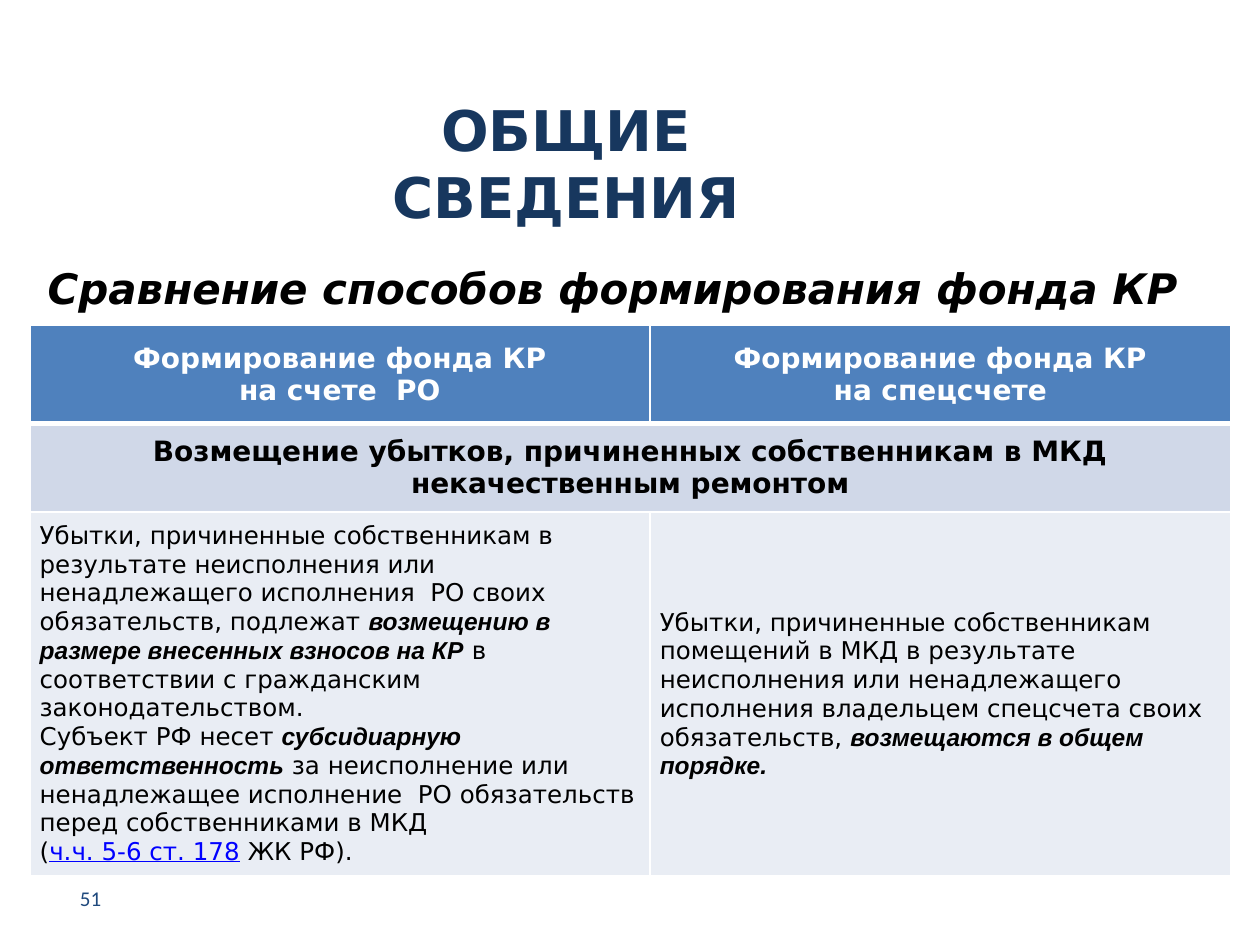
from lxml.etree import SubElement
from pptx import Presentation
from pptx.dml.color import RGBColor
from pptx.enum.text import MSO_ANCHOR, PP_ALIGN
from pptx.oxml.ns import qn
from pptx.util import Cm, Pt

COLORS = {
    "title": "17375E",
    "number": "1F497D",
    "text": "000000",
    "link": "0000FF",
    "white": "FFFFFF",
    "header": "4F81BD",
    "topic": "D0D8E8",
    "body": "E9EDF4",
}
MAIN_FONT = "DejaVu Sans"
ACCENT_FONT = "Arial"

# Cell texts: a list of paragraphs, each a list of (text, kind) spans
HEADERS = [
    [[("Формирование фонда КР", "plain")], [("на счете  РО", "plain")]],
    [[("Формирование фонда КР", "plain")], [("на спецсчете", "plain")]],
]
TOPIC = [[("Возмещение убытков, причиненных собственникам в МКД "
           "некачественным ремонтом", "plain")]]
DETAILS = [
    [
        [("Убытки, причиненные собственникам в результате неисполнения или "
          "ненадлежащего исполнения  РО своих обязательств, подлежат ", "plain"),
         ("возмещению в размере внесенных взносов на КР", "accent"),
         (" в соответствии с гражданским законодательством.", "plain")],
        [("Субъект РФ несет ", "plain"),
         ("субсидиарную ответственность", "accent"),
         (" за неисполнение или ненадлежащее исполнение  РО обязательств "
          "перед собственниками в МКД", "plain")],
        [("(", "plain"), ("ч.ч. 5-6 ст. 178", "link"), (" ЖК РФ).", "plain")],
    ],
    [
        [("Убытки, причиненные собственникам помещений в МКД в результате "
          "неисполнения или ненадлежащего исполнения владельцем спецсчета "
          "своих обязательств, ", "plain"),
         ("возмещаются в общем порядке.", "accent")],
    ],
]


def color(name):
    return RGBColor.from_string(COLORS[name])


def style_font(font, size, color_name, name=MAIN_FONT, bold=False, italic=False):
    font.name = name
    font.size = Pt(size)
    font.bold = bold
    font.italic = italic
    font.color.rgb = color(color_name)


def add_text(page, position, text, align, anchor, **style):
    box = page.shapes.add_textbox(*(Cm(value) for value in position))
    frame = box.text_frame
    frame.word_wrap = True
    frame.vertical_anchor = anchor
    para = frame.paragraphs[0]
    para.text = text
    para.alignment = align
    style_font(para.font, **style)


def add_borders(cell, top, bottom):
    properties = cell._tc.get_or_add_tcPr()
    for side, width in (("L", 1), ("R", 1), ("T", top), ("B", bottom)):
        line = SubElement(properties, qn(f"a:ln{side}"), w=str(Pt(width)))
        fill = SubElement(line, qn("a:solidFill"))
        SubElement(fill, qn("a:srgbClr"), val=COLORS["white"])


def fill_cell(cell, paragraphs, align, **style):
    frame = cell.text_frame
    for index, spans in enumerate(paragraphs):
        para = frame.add_paragraph() if index else frame.paragraphs[0]
        para.alignment = align
        style_font(para.font, **style)
        for text, kind in spans:
            span = para.add_run()
            span.text = text
            # Runs carry the font as well, since table text ignores paragraph defaults
            style_font(span.font, **style)
            if kind == "accent":
                span.font.name = ACCENT_FONT
                span.font.bold = span.font.italic = True
            elif kind == "link":
                span.font.color.rgb = color("link")
                span.font.underline = True


def add_comparison(page):
    widths = (12.5, 11.71)
    heights = (1.98, 1.78, 7.34)
    frame = page.shapes.add_table(len(heights), len(widths), Cm(0.6), Cm(6.56),
                                  Cm(sum(widths)), Cm(sum(heights)))
    table = frame.table
    for column, width in zip(table.columns, widths):
        column.width = Cm(width)
    for row, height in zip(table.rows, heights):
        row.height = Cm(height)

    # Borders and fills, with a thick rule under the header
    looks = (("header", 1, 3), ("topic", 3, 1), ("body", 1, 1))
    for row, (fill_name, top, bottom) in zip(table.rows, looks):
        for cell in row.cells:
            add_borders(cell, top, bottom)
            cell.fill.solid()
            cell.fill.fore_color.rgb = color(fill_name)
            cell.vertical_anchor = MSO_ANCHOR.MIDDLE
            cell.margin_left = cell.margin_right = Cm(0.2)
            cell.margin_top = cell.margin_bottom = Cm(0.1)

    # Cell texts
    table.cell(1, 0).merge(table.cell(1, 1))
    fill_cell(table.cell(1, 0), TOPIC, PP_ALIGN.CENTER,
              size=16, color_name="text", bold=True)
    for column, (header, detail) in enumerate(zip(HEADERS, DETAILS)):
        fill_cell(table.cell(0, column), header, PP_ALIGN.CENTER,
                  size=16, color_name="white", bold=True)
        fill_cell(table.cell(2, column), detail, PP_ALIGN.LEFT,
                  size=14, color_name="text")


def main():
    deck = Presentation()
    deck.slide_width, deck.slide_height = Cm(25.4), Cm(19.05)
    page = deck.slides.add_slide(deck.slide_layouts[6])

    # Title and subtitle
    add_text(page, (6.15, 1.4, 10.52, 3.76), "ОБЩИЕ СВЕДЕНИЯ",
             PP_ALIGN.CENTER, MSO_ANCHOR.MIDDLE,
             size=32, color_name="title", bold=True)
    add_text(page, (0.71, 5.16, 24.31, 1.4),
             "Сравнение способов формирования фонда КР",
             PP_ALIGN.LEFT, MSO_ANCHOR.TOP,
             size=24, color_name="text", bold=True, italic=True)

    # Comparison table
    add_comparison(page)

    # Page number
    add_text(page, (0.89, 17.6, 1.4, 1.02), "51",
             PP_ALIGN.RIGHT, MSO_ANCHOR.MIDDLE,
             size=12, color_name="number", name="Calibri")

    deck.save("out.pptx")


if __name__ == "__main__":
    main()
